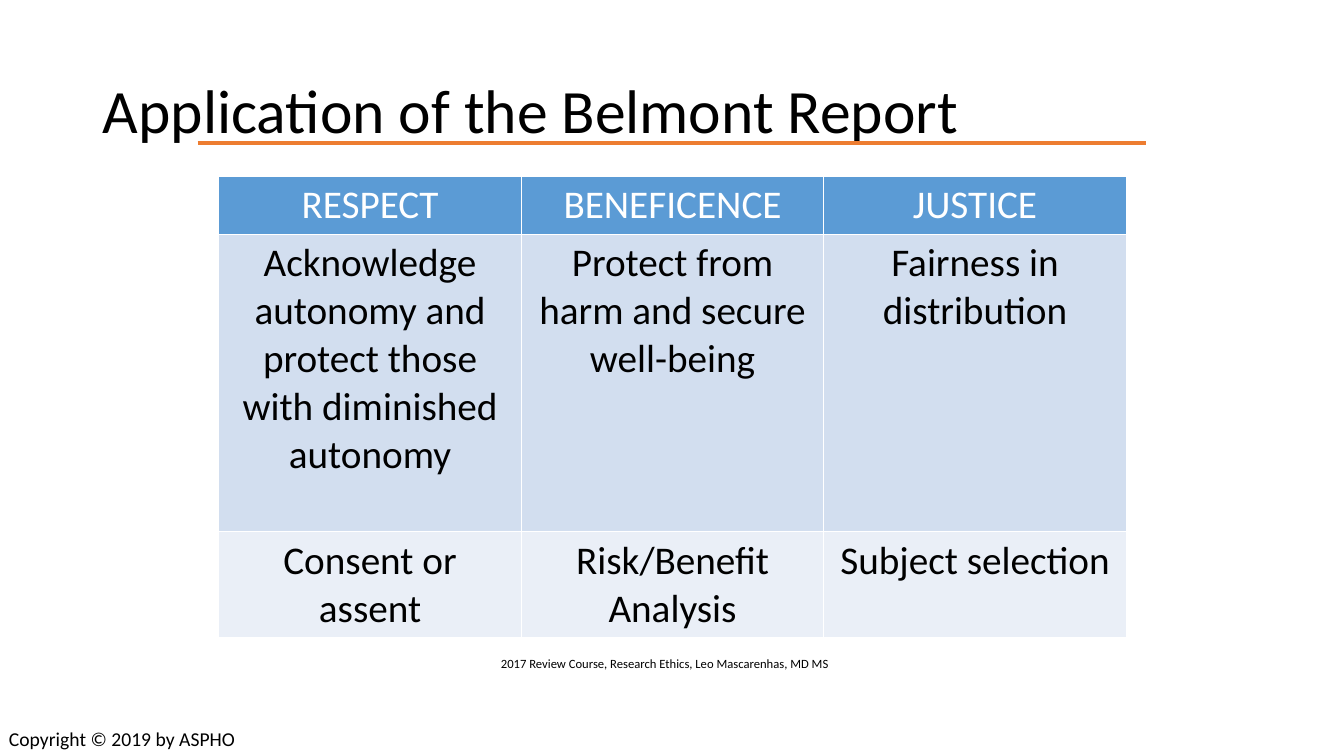
"""Build a slide with a table that applies the Belmont Report principles."""
from lxml import etree
from pptx import Presentation
from pptx.dml.color import RGBColor
from pptx.enum.shapes import MSO_CONNECTOR
from pptx.enum.text import MSO_ANCHOR, PP_ALIGN
from pptx.oxml.ns import qn
from pptx.util import Inches, Pt

STRAIGHT = MSO_CONNECTOR.STRAIGHT
MIDDLE = MSO_ANCHOR.MIDDLE
LEFT, CENTER = PP_ALIGN.LEFT, PP_ALIGN.CENTER
BLACK, WHITE, ORANGE = "000000", "FFFFFF", "ED7D31"


def color(value):
    return RGBColor.from_string(value)


def format_paragraph(paragraph, size, text_color=BLACK, alignment=LEFT):
    paragraph.alignment = alignment
    paragraph.font.name = "Calibri"
    paragraph.font.size = Pt(size)
    paragraph.font.bold = False
    paragraph.font.color.rgb = color(text_color)


presentation = Presentation()
presentation.slide_width = Inches(13.33)
presentation.slide_height = Inches(7.5)
slide = presentation.slides.add_slide(presentation.slide_layouts[5])

title = slide.shapes.title
title.left, title.top = Inches(0.92), Inches(0.4)
title.width, title.height = Inches(11.5), Inches(1.45)
title.text_frame.text = "Application of the Belmont Report"
title.text_frame.vertical_anchor = MIDDLE
title_paragraph = title.text_frame.paragraphs[0]
title_paragraph.line_spacing = 0.9
format_paragraph(title_paragraph, 44)

table_rows = [
    (0.57, "5B9BD5", WHITE, ["RESPECT", "BENEFICENCE", "JUSTICE"]),
    (2.95, "D2DEEF", BLACK, [
        "Acknowledge autonomy and protect those with diminished autonomy",
        "Protect from harm and secure well-being",
        "Fairness in distribution",
    ]),
    (1.05, "EAEFF7", BLACK, [
        "Consent or assent", "Risk/Benefit Analysis", "Subject selection",
    ]),
]
table = slide.shapes.add_table(
    len(table_rows), 3, Inches(2.17), Inches(1.75), Inches(9), Inches(4.57)
).table
for row, (height, fill, text_color, texts) in zip(table.rows, table_rows):
    row.height = Inches(height)
    for cell, text in zip(row.cells, texts):
        cell.text = text
        cell.fill.solid()
        cell.fill.fore_color.rgb = color(fill)
        format_paragraph(cell.text_frame.paragraphs[0], 28, text_color, CENTER)

title_rule = slide.shapes.add_connector(
    STRAIGHT, Inches(1.96), Inches(1.42), Inches(11.37), Inches(1.42)
)
title_rule.line.color.rgb = color(ORANGE)
title_rule.line.width = Pt(3)
etree.SubElement(title_rule._element.spPr, qn("a:effectLst"))

notices = [
    (4.87, 6.46, 5.01, 0.25, 9,
     "2017 Review Course, Research Ethics, Leo Mascarenhas, MD MS"),
    (-0.01, 7.16, 2.48, 0.34, 14, "Copyright © 2019 by ASPHO"),
]
for left, top, width, height, size, text in notices:
    text_box = slide.shapes.add_textbox(
        Inches(left), Inches(top), Inches(width), Inches(height)
    )
    text_box.text_frame.word_wrap = True
    text_box.text_frame.text = text
    format_paragraph(text_box.text_frame.paragraphs[0], size)

presentation.save("out.pptx")
